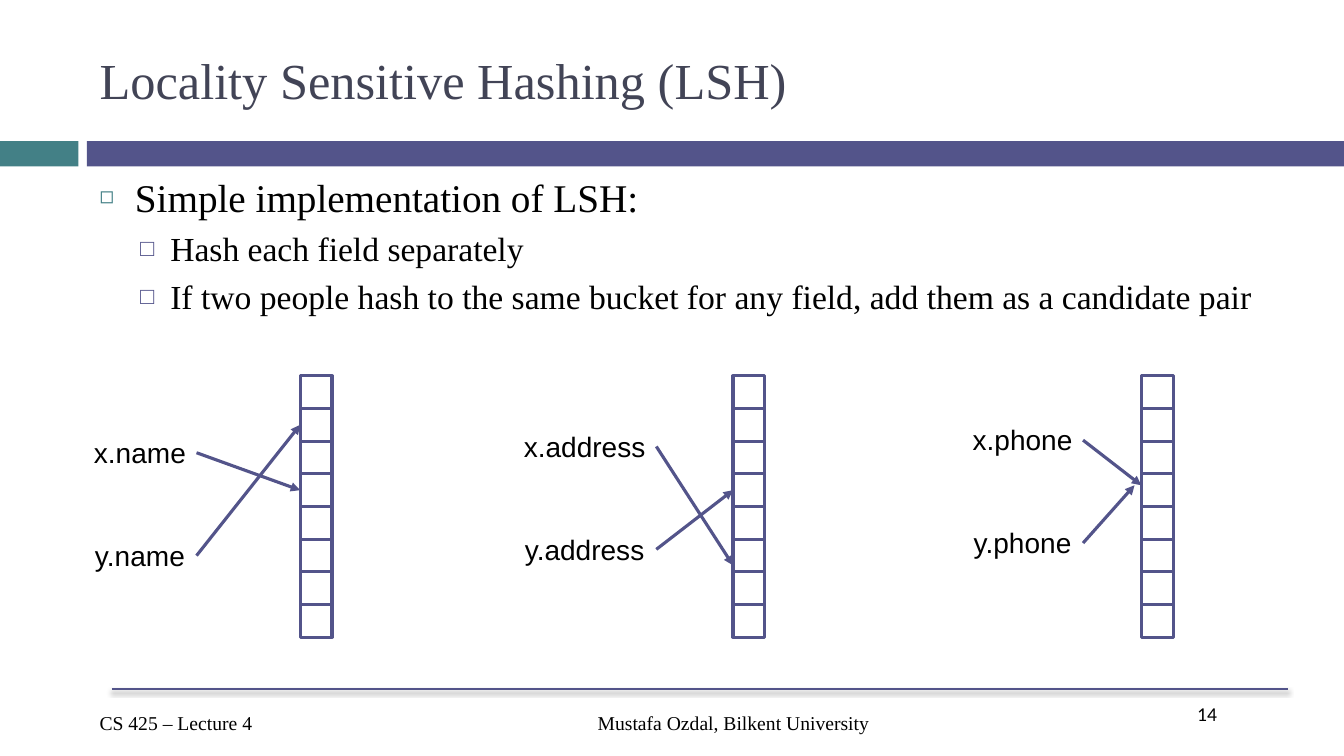
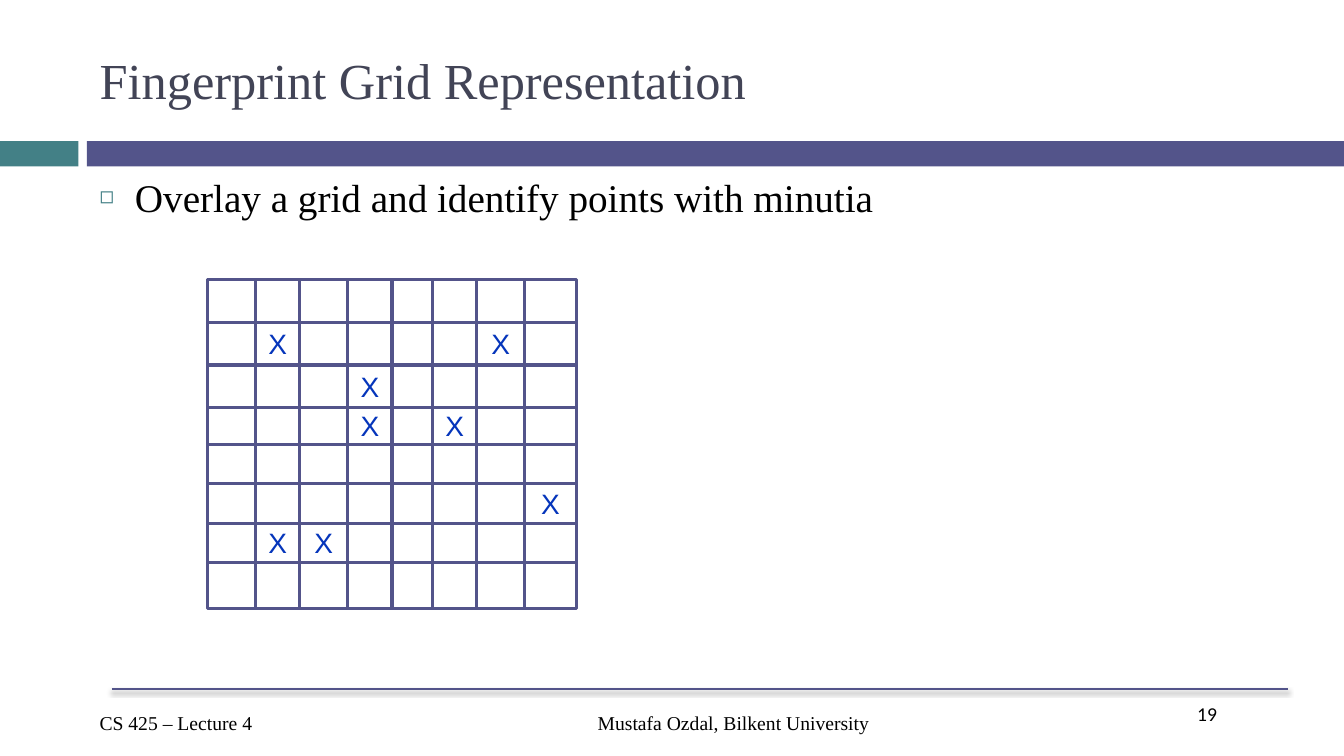
import dataclasses

import lxml.etree
import pptx
import pptx.dml.color
import pptx.enum.shapes
import pptx.enum.text
import pptx.oxml.ns
import pptx.util

SLIDE_WIDTH, SLIDE_HEIGHT = 13.33, 7.5
COLUMNS, ROWS = 120, 90
INDIGO, TEAL, SLATE, BLACK, BLUE = "53548A", "438086", "424456", "000000", "0535BB"
SERIF, SANS, NUMBER_FONT = "Times New Roman", "Arial", "Calibri"
ALIGN = pptx.enum.text.PP_ALIGN
LEVELS = [
    {"size": 28, "margin": 0.35, "hanging": 0.35, "space": 7,
     "bullet": "◻", "color": TEAL, "percent": 60},
    {"size": 24, "margin": 0.7, "hanging": 0.3, "space": 5.5,
     "bullet": "□", "color": INDIGO, "percent": 70},
]


@dataclasses.dataclass
class Box:
    left: float
    top: float
    width: float
    height: float

    @property
    def right(self):
        return self.left + self.width

    @property
    def bottom(self):
        return self.top + self.height

    @property
    def middle(self):
        return self.top + self.height / 2

    def lengths(self):
        return (across(self.left), down(self.top),
                across(self.width), down(self.height))


TITLE_BOX = Box(8, 3, 107, 13)
BAND_ACCENT = Box(0, 16.8, 7, 3)
BAND_MAIN = Box(7.75, 16.8, 112.25, 3)
COURSE_BOX = Box(8, 84, 22, 4)
AUTHOR_BOX = Box(31, 84, 69, 4)
NUMBER_BOX = Box(106, 83, 9, 6)


def across(columns):
    return pptx.util.Inches(SLIDE_WIDTH * columns / COLUMNS)


def down(rows):
    return pptx.util.Inches(SLIDE_HEIGHT * rows / ROWS)


def rgb(color):
    return pptx.dml.color.RGBColor.from_string(color)


def add_element(parent, tag, **attributes):
    element = lxml.etree.SubElement(parent, pptx.oxml.ns.qn(tag))
    for name, value in attributes.items():
        element.set(name, str(value))
    return element


def format_paragraph(paragraph, size, color, font_name, alignment=ALIGN.LEFT):
    paragraph.alignment = alignment
    for run in paragraph.runs:
        run.font.size = pptx.util.Pt(size)
        run.font.name = font_name
        run.font.color.rgb = rgb(color)


def add_label(slide, box, text, size, color, font_name, alignment=ALIGN.LEFT, wrap=True):
    frame = slide.shapes.add_textbox(*box.lengths()).text_frame
    frame.word_wrap = wrap
    frame.text = text
    format_paragraph(frame.paragraphs[0], size, color, font_name, alignment)


def add_rectangle(shapes, box, fill=None, outline=None):
    shape = shapes.add_shape(pptx.enum.shapes.MSO_SHAPE.RECTANGLE, *box.lengths())
    shape.shadow.inherit = False
    if fill:
        shape.fill.solid()
        shape.fill.fore_color.rgb = rgb(fill)
    else:
        shape.fill.background()
    if outline:
        shape.line.color.rgb = rgb(outline)
        shape.line.width = pptx.util.Pt(2.25)
    else:
        shape.line.fill.background()


def add_line(shapes, start, end, width=2.25, arrow=False):
    connector = shapes.add_connector(
        pptx.enum.shapes.MSO_CONNECTOR.STRAIGHT,
        across(start[0]), down(start[1]), across(end[0]), down(end[1]))
    connector.line.color.rgb = rgb(INDIGO)
    connector.line.width = pptx.util.Pt(width)
    properties = connector._element.spPr
    if arrow:
        add_element(properties.find(pptx.oxml.ns.qn("a:ln")), "a:tailEnd", type="triangle")
    return add_element(properties, "a:effectLst")


def add_title(slide, text):
    title = slide.shapes.title
    title.left, title.top, title.width, title.height = TITLE_BOX.lengths()
    frame = title.text_frame
    frame.auto_size = pptx.enum.text.MSO_AUTO_SIZE.NONE
    frame.vertical_anchor = pptx.enum.text.MSO_ANCHOR.MIDDLE
    frame.text = text
    format_paragraph(frame.paragraphs[0], 36, SLATE, SERIF)


def add_bands(slide):
    add_rectangle(slide.shapes, BAND_ACCENT, fill=TEAL)
    add_rectangle(slide.shapes, BAND_MAIN, fill=INDIGO)


def add_footer(slide, number):
    effects = add_line(slide.shapes, (10, 82), (115, 82), width=1.5)
    shadow = add_element(effects, "a:outerShdw", blurRad=pptx.util.Pt(3),
                         dist=pptx.util.Pt(2.4), dir=5400000, rotWithShape=0)
    shadow_color = add_element(shadow, "a:srgbClr", val=BLACK)
    add_element(shadow_color, "a:alpha", val=45000)
    add_label(slide, COURSE_BOX, "CS 425 – Lecture 4", 14, BLACK, SERIF)
    add_label(slide, AUTHOR_BOX, "Mustafa Ozdal, Bilkent University",
              14, BLACK, SERIF, ALIGN.CENTER)
    add_label(slide, NUMBER_BOX, str(number), 14, BLACK, NUMBER_FONT)


def add_bullets(slide, box, items):
    body = slide.placeholders[1]
    body.left, body.top, body.width, body.height = box.lengths()
    frame = body.text_frame
    frame.auto_size = pptx.enum.text.MSO_AUTO_SIZE.NONE
    frame.text = "\n".join(text for level, text in items)
    for index, (level, text) in enumerate(items):
        style = LEVELS[level]
        paragraph = frame.paragraphs[index]
        paragraph.level = level
        properties = paragraph._p.get_or_add_pPr()
        properties.set("marL", str(pptx.util.Inches(style["margin"])))
        properties.set("indent", str(-pptx.util.Inches(style["hanging"])))
        bullet_color = add_element(properties, "a:buClr")
        add_element(bullet_color, "a:srgbClr", val=style["color"])
        add_element(properties, "a:buSzPct", val=style["percent"] * 1000)
        add_element(properties, "a:buChar", char=style["bullet"])
        paragraph.space_before = pptx.util.Pt(style["space"] if index else 0)
        format_paragraph(paragraph, style["size"], BLACK, SERIF)


def add_content_slide(presentation, title, number, body_box, items):
    slide = presentation.slides.add_slide(presentation.slide_layouts[1])
    add_bands(slide)
    add_footer(slide, number)
    add_title(slide, title)
    add_bullets(slide, body_box, items)
    return slide


def add_ruled_box(shapes, box, column_lines, row_lines):
    add_rectangle(shapes, box, outline=INDIGO)
    for column in column_lines:
        add_line(shapes, (column, box.top), (column, box.bottom))
    for row in row_lines:
        add_line(shapes, (box.left, row), (box.right, row))


def add_hash_panel(slide, box, field, label_width, label_top, targets):
    bucket_count, bucket_width, label_height, label_step = 8, 2.85, 5.3, 12.25
    bucket_height = box.height / bucket_count
    buckets = Box(box.right - bucket_width, box.top, bucket_width, box.height)
    group = slide.shapes.add_group_shape()
    add_ruled_box(group.shapes, buckets, [],
                  [box.top + bucket_height * index for index in range(1, bucket_count)])
    for index, (record, (bucket, gap)) in enumerate(zip("xy", targets)):
        label = Box(box.left, box.top + label_top + index * label_step,
                    label_width, label_height)
        add_label(slide, label, f"{record}.{field}", 20, BLACK, SANS, ALIGN.CENTER, wrap=False)
        add_line(slide.shapes, (label.right, label.middle),
                 (buckets.left - gap, box.top + bucket * bucket_height), arrow=True)


def add_minutia_grid(slide, box, column_shares, row_shares, marks):
    columns = [box.left + box.width * share for share in column_shares]
    rows = [box.top + box.height * share for share in row_shares]
    add_ruled_box(slide.shapes, box, columns[1:-1], rows[1:-1])
    mark_width, mark_height = 3.5, 5.3
    for column, row in marks:
        center = (columns[column] + columns[column + 1]) / 2
        middle = (rows[row] + rows[row + 1]) / 2
        mark = Box(center - mark_width / 2, middle - mark_height / 2, mark_width, mark_height)
        add_label(slide, mark, "X", 20, BLUE, SANS, ALIGN.CENTER, wrap=False)


def build_hashing_slide(presentation):
    slide = add_content_slide(
        presentation, "Locality Sensitive Hashing (LSH)", 14, Box(8, 20, 107, 21.7),
        [(0, "Simple implementation of LSH:"),
         (1, "Hash each field separately"),
         (1, "If two people hash to the same bucket for any field, "
             "add them as a candidate pair")])
    panels = [
        (7.45, 22.2, "name", 10.1, 6.5, [(3.5, 0), (1.5, 0)]),
        (45.8, 22.5, "address", 12.8, 5.75, [(5.8, 0), (3.5, 0)]),
        (85.9, 18.85, "phone", 10.8, 5, [(3.35, 0), (3.35, 0.6)]),
    ]
    for left, width, *details in panels:
        add_hash_panel(slide, Box(left, 44.75, width, 31.1), *details)


def build_fingerprint_slide(presentation):
    slide = add_content_slide(
        presentation, "Fingerprint Grid Representation", 19, Box(8, 20, 107, 9.25),
        [(0, "Overlay a grid and identify points with minutia")])
    add_minutia_grid(
        slide, Box(18.55, 33.25, 32.9, 39.25),
        [0, 0.13, 0.25, 0.38, 0.5, 0.61, 0.73, 0.86, 1],
        [0, 0.13, 0.26, 0.39, 0.5, 0.62, 0.74, 0.86, 1],
        [(1, 1), (6, 1), (3, 2), (3, 3), (5, 3), (7, 5), (1, 6), (2, 6)])


def main():
    presentation = pptx.Presentation()
    presentation.slide_width = pptx.util.Inches(SLIDE_WIDTH)
    presentation.slide_height = pptx.util.Inches(SLIDE_HEIGHT)
    build_hashing_slide(presentation)
    build_fingerprint_slide(presentation)
    presentation.save("out.pptx")


if __name__ == "__main__":
    main()
